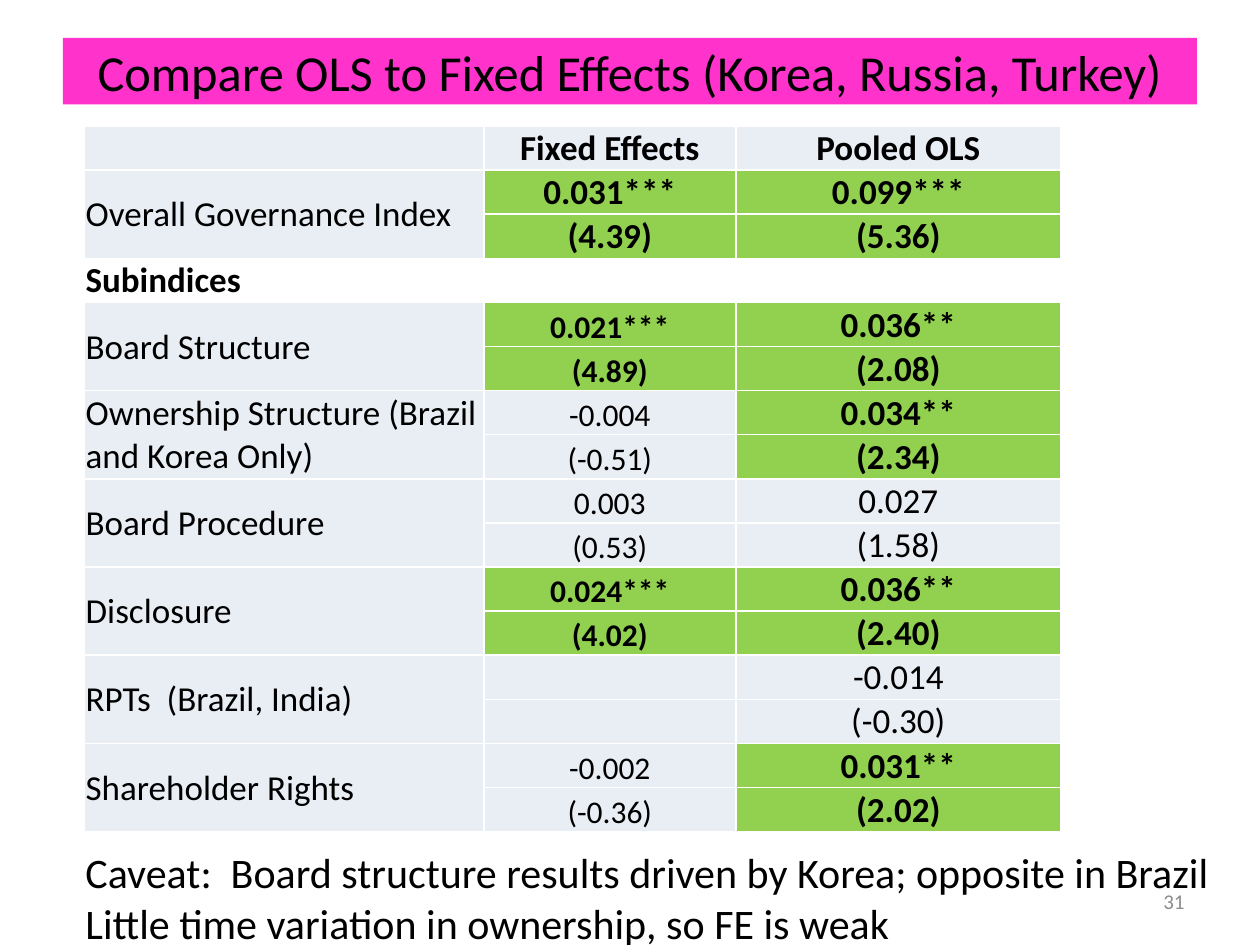
from lxml import etree
from pptx import Presentation
from pptx.dml.color import RGBColor
from pptx.enum.text import MSO_ANCHOR, PP_ALIGN
from pptx.oxml.ns import qn
from pptx.util import Inches, Pt

LEFT, CENTER, RIGHT = PP_ALIGN.LEFT, PP_ALIGN.CENTER, PP_ALIGN.RIGHT
TOP, MIDDLE, BOTTOM = MSO_ANCHOR.TOP, MSO_ANCHOR.MIDDLE, MSO_ANCHOR.BOTTOM
PINK = RGBColor(0xFF, 0x33, 0xCC)
GREEN = RGBColor(0x92, 0xD0, 0x50)
PALE = RGBColor(0xE9, 0xED, 0xF4)
BLACK = RGBColor(0, 0, 0)
GRAY = RGBColor(0x8C, 0x8C, 0x8C)

TITLE = "Compare OLS to Fixed Effects (Korea, Russia, Turkey)"
CAVEATS = [
    "Caveat:  Board structure results driven by Korea; opposite in Brazil",
    "Little time variation in ownership, so FE is weak",
]
HEADINGS = ["", "Fixed Effects", "Pooled OLS"]
OVERALL = ("Overall Governance Index", ("0.031***", "(4.39)"), ("0.099***", "(5.36)"))
SUBINDICES = [
    ("Board Structure", ("0.021***", "(4.89)"), ("0.036**", "(2.08)")),
    ("Ownership Structure (Brazil and Korea Only)", ("-0.004", "(-0.51)"), ("0.034**", "(2.34)")),
    ("Board Procedure", ("0.003", "(0.53)"), ("0.027", "(1.58)")),
    ("Disclosure", ("0.024***", "(4.02)"), ("0.036**", "(2.40)")),
    ("RPTs  (Brazil, India)", ("", ""), ("-0.014", "(-0.30)")),
    ("Shareholder Rights", ("-0.002", "(-0.36)"), ("0.031**", "(2.02)")),
]
COLUMN_WIDTHS = [3.17, 2, 2.58]
ROW_HEIGHT = 0.35
SUBINDEX_ROW = 3
ROW_COUNT = SUBINDEX_ROW + 1 + 2 * len(SUBINDICES)


def write(paragraph, text, size, align=LEFT, bold=False, color=BLACK):
    paragraph.alignment = align
    run = paragraph.add_run()
    run.text = text
    run.font.color.rgb = color
    font_format = {"name": "Calibri", "size": Pt(size), "bold": bold}
    for name, value in font_format.items():
        setattr(run.font, name, value)


def add_text(slide, box, lines, size, align, anchor, color=BLACK, wrap=True):
    shape = slide.shapes.add_textbox(*map(Inches, box))
    frame = shape.text_frame
    frame.word_wrap = wrap
    frame.vertical_anchor = anchor
    for index, line in enumerate(lines):
        paragraph = frame.add_paragraph() if index else frame.paragraphs[0]
        write(paragraph, line, size, align, color=color)
    return shape


def add_borders(cell):
    properties = cell._tc.get_or_add_tcPr()
    for index, side in enumerate(("a:lnL", "a:lnR", "a:lnT", "a:lnB")):
        line = etree.Element(qn(side), w=str(Pt(1)))
        fill = etree.SubElement(line, qn("a:solidFill"))
        etree.SubElement(fill, qn("a:srgbClr"), val="FFFFFF")
        properties.insert(index, line)


def fill_cell(cell, text, size=20, align=CENTER, bold=False, anchor=BOTTOM, fill=PALE):
    cell.vertical_anchor = anchor
    cell.fill.solid()
    cell.fill.fore_color.rgb = fill
    if text:
        write(cell.text_frame.paragraphs[0], text, size, align, bold)


def add_index(table, row, index, fixed_size):
    label, *estimates = index
    table.cell(row, 0).merge(table.cell(row + 1, 0))
    fill_cell(table.cell(row, 0), label, align=LEFT, anchor=MIDDLE)
    for column, (pair, size) in enumerate(zip(estimates, (fixed_size, 20)), 1):
        significant = "*" in pair[0]
        for offset, text in enumerate(pair):
            fill_cell(table.cell(row + offset, column), text, size,
                      bold=significant, fill=GREEN if significant else PALE)


def add_results(slide):
    frame = slide.shapes.add_table(
        ROW_COUNT, len(COLUMN_WIDTHS), Inches(0.67), Inches(1),
        Inches(sum(COLUMN_WIDTHS)), Inches(ROW_HEIGHT * ROW_COUNT))
    table = frame.table
    table.first_row = table.horz_banding = False
    for column, width in zip(table.columns, COLUMN_WIDTHS):
        column.width = Inches(width)
    for row in table.rows:
        row.height = Inches(ROW_HEIGHT)
    margins = {"margin_left": 0.01, "margin_right": 0.01, "margin_top": 0.01, "margin_bottom": 0}
    for cell in table.iter_cells():
        for name, value in margins.items():
            setattr(cell, name, Inches(value))
        add_borders(cell)

    for column, heading in enumerate(HEADINGS):
        fill_cell(table.cell(0, column), heading, bold=True)
    add_index(table, 1, OVERALL, 20)
    fill_cell(table.cell(SUBINDEX_ROW, 0), "Subindices", align=LEFT, bold=True)
    table.cell(SUBINDEX_ROW, 1).merge(table.cell(SUBINDEX_ROW, 2))
    for column in range(len(COLUMN_WIDTHS)):
        table.cell(SUBINDEX_ROW, column).fill.background()
    for position, index in enumerate(SUBINDICES):
        add_index(table, SUBINDEX_ROW + 1 + 2 * position, index, 18)


def main():
    presentation = Presentation()
    presentation.slide_width = Inches(10)
    presentation.slide_height = Inches(7.5)
    slide = presentation.slides.add_slide(presentation.slide_layouts[6])
    title = add_text(slide, (0.5, 0.3, 9, 0.53), [TITLE], 28.8, CENTER, MIDDLE)
    title.fill.solid()
    title.fill.fore_color.rgb = PINK
    add_results(slide)
    add_text(slide, (0.58, 6.67, 9.2, 0.91), CAVEATS, 24, LEFT, TOP, wrap=False)
    add_text(slide, (7.17, 6.95, 2.33, 0.4), ["31"], 12, RIGHT, MIDDLE, GRAY)
    presentation.save("out.pptx")


if __name__ == "__main__":
    main()
